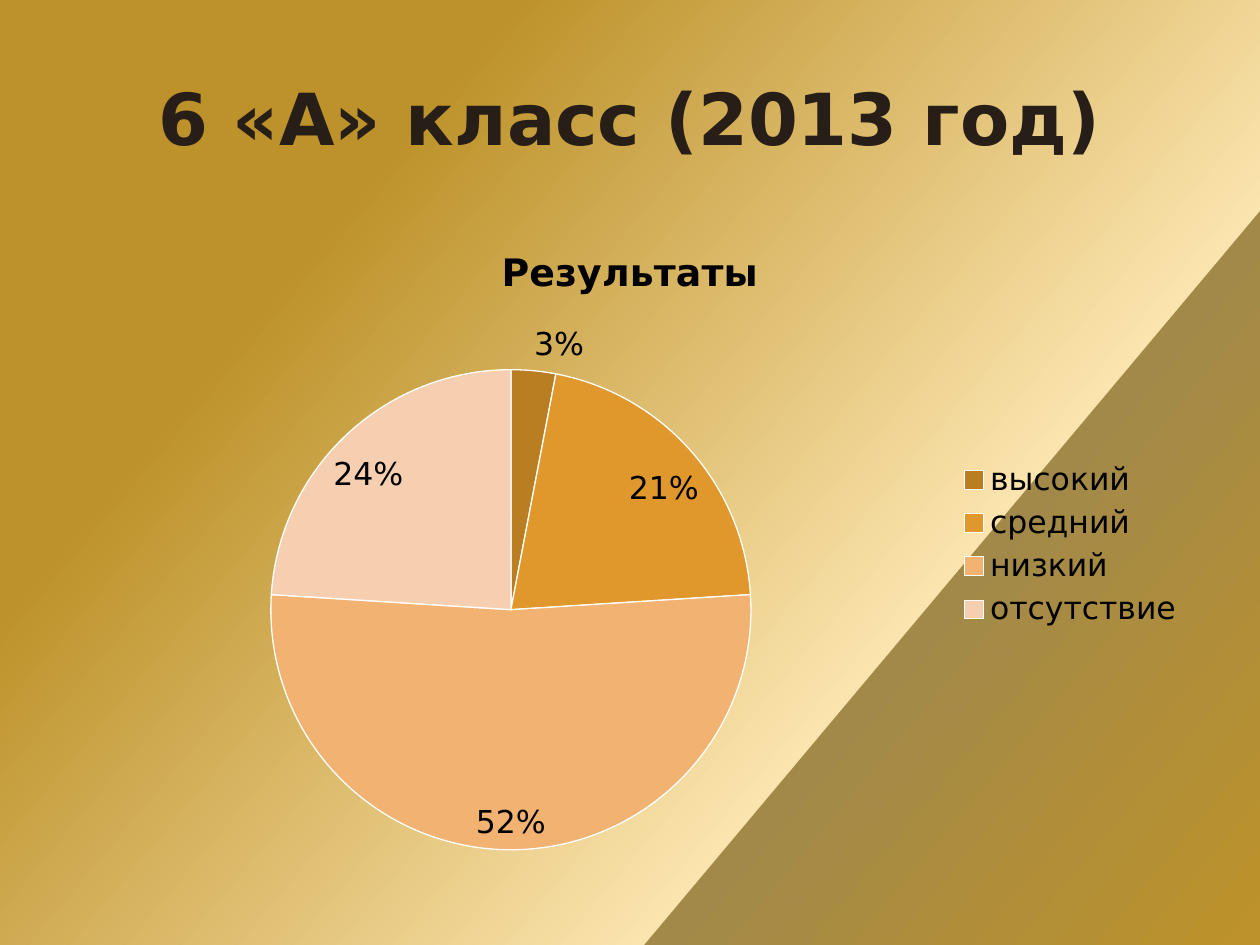
from dataclasses import dataclass

from lxml import etree
from pptx import Presentation
from pptx.chart.data import CategoryChartData
from pptx.dml.color import RGBColor
from pptx.enum.chart import XL_CHART_TYPE, XL_LABEL_POSITION, XL_LEGEND_POSITION
from pptx.enum.text import MSO_ANCHOR, PP_ALIGN
from pptx.oxml import parse_xml
from pptx.oxml.ns import nsdecls, qn
from pptx.util import Inches, Pt

PIE = XL_CHART_TYPE.PIE
BEST_FIT = XL_LABEL_POSITION.BEST_FIT
LEGEND_RIGHT = XL_LEGEND_POSITION.RIGHT
MIDDLE = MSO_ANCHOR.MIDDLE
CENTER = PP_ALIGN.CENTER

FONT = "DejaVu Sans"
COLORS = {
    "title": "271E18",
    "text": "000000",
    "outline": "FFFFFF",
    "gold": "BD922A",
    "cream": "FBE4AE",
    "olive": "A28949",
    "high": "BA7E22",
    "medium": "E0982C",
    "low": "F2B272",
    "absent": "F6CFB1",
}
# Two stops at 70 % make the hard diagonal edge
BACKGROUND_STOPS = [(0, "gold"), (25, "gold"), (70, "cream"), (70, "olive"), (100, "gold")]


@dataclass(frozen=True)
class Result:
    level: str
    percent: int
    color: str


RESULTS = [
    Result("высокий", 3, "high"),
    Result("средний", 21, "medium"),
    Result("низкий", 52, "low"),
    Result("отсутствие", 24, "absent"),
]


def rgb(name: str) -> RGBColor:
    return RGBColor.from_string(COLORS[name])


def style_font(font, size: float, color: str, bold: bool = False) -> None:
    font.name = FONT
    font.size = Pt(size)
    font.bold = bold
    font.color.rgb = rgb(color)


def paint_background(slide) -> None:
    fill = slide.background.fill
    fill.gradient()
    fill.gradient_angle = 320  # counter-clockwise, 40 degrees clockwise
    stop_list = next(slide.background._cSld.iter(qn("a:gsLst")))
    for stop in list(stop_list):
        stop_list.remove(stop)
    for position, color in BACKGROUND_STOPS:
        stop = etree.SubElement(stop_list, qn("a:gs"), pos=str(position * 1000))
        etree.SubElement(stop, qn("a:srgbClr"), val=COLORS[color])


def add_title(slide, text: str) -> None:
    shape = slide.shapes.add_textbox(Inches(0.5), Inches(0.3), Inches(9), Inches(1.25))
    frame = shape.text_frame
    frame.word_wrap = True
    frame.vertical_anchor = MIDDLE
    paragraph = frame.paragraphs[0]
    paragraph.text = text
    paragraph.alignment = CENTER
    style_font(paragraph.font, 41, "title", bold=True)


def place_plot(chart, x: float, y: float, width: float, height: float) -> None:
    """Set the inner plot area as fractions of the chart."""
    plot_area = chart._chartSpace.chart.plotArea
    for layout in plot_area.findall(qn("c:layout")):
        plot_area.remove(layout)
    plot_area.insert(0, parse_xml(
        f'<c:layout {nsdecls("c")}><c:manualLayout><c:layoutTarget val="inner"/>'
        '<c:xMode val="edge"/><c:yMode val="edge"/>'
        f'<c:x val="{x}"/><c:y val="{y}"/><c:w val="{width}"/><c:h val="{height}"/>'
        "</c:manualLayout></c:layout>"))


def add_results_chart(slide, title: str, results: list[Result]) -> None:
    data = CategoryChartData()
    data.categories = [result.level for result in results]
    data.add_series(title, [result.percent for result in results])
    chart = slide.shapes.add_chart(
        PIE, Inches(0.5), Inches(1.75), Inches(9), Inches(5.15), data).chart
    style_font(chart.font, 18, "text")

    # Chart title and legend
    chart.has_title = True
    paragraph = chart.chart_title.text_frame.paragraphs[0]
    paragraph.text = title
    style_font(paragraph.font, 21.6, "text", bold=True)
    chart.has_legend = True
    chart.legend.position = LEGEND_RIGHT
    chart.legend.include_in_layout = False
    style_font(chart.legend.font, 18, "text")

    # Slices
    plot = chart.plots[0]
    plot.vary_by_categories = True
    for index, result in enumerate(results):
        slice_format = plot.series[0].points[index].format
        slice_format.fill.solid()
        slice_format.fill.fore_color.rgb = rgb(result.color)
        slice_format.line.color.rgb = rgb("outline")
        slice_format.line.width = Pt(0.75)

    # Percent labels
    plot.has_data_labels = True
    labels = plot.data_labels
    labels.show_value = False
    labels.show_percentage = True
    labels.number_format = "0%"
    labels.number_format_is_linked = False
    labels.position = BEST_FIT
    style_font(labels.font, 18, "text")
    place_plot(chart, 0.18, 0.23, 0.43, 0.74)


def main() -> None:
    presentation = Presentation()
    presentation.slide_width = Inches(10)
    presentation.slide_height = Inches(7.5)
    slide = presentation.slides.add_slide(presentation.slide_layouts[6])
    paint_background(slide)
    add_title(slide, "6 «А» класс (2013 год)")
    add_results_chart(slide, "Результаты", RESULTS)
    presentation.save("out.pptx")


if __name__ == "__main__":
    main()
